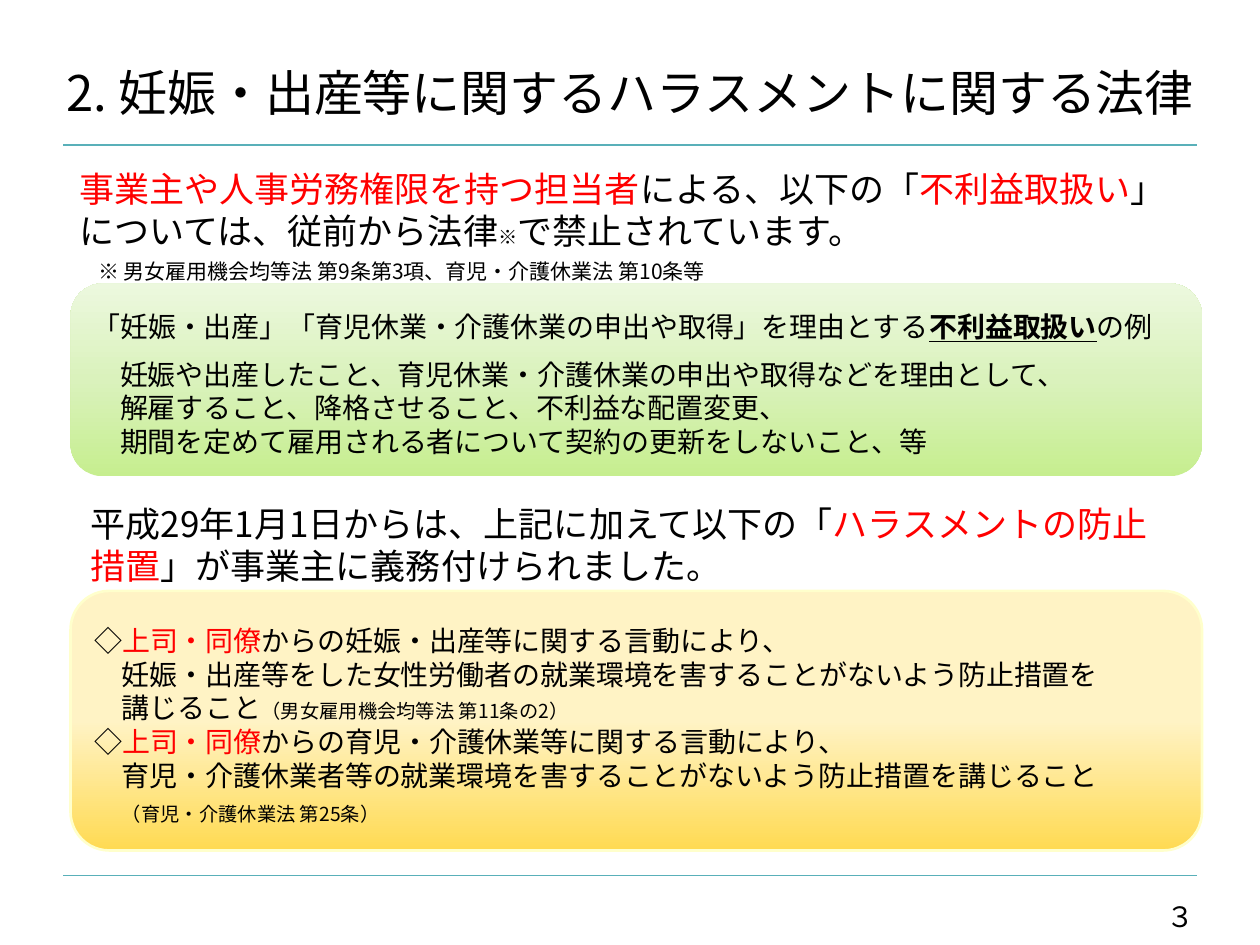
"""Build a slide on the law about harassment over pregnancy and childbirth."""
import copy
from dataclasses import dataclass

import pptx
import pptx.dml.color
import pptx.enum.lang
import pptx.enum.shapes
import pptx.enum.text
import pptx.oxml
import pptx.oxml.ns
import pptx.util
from pptx.util import Inches

ANCHOR = pptx.enum.text.MSO_ANCHOR


@dataclass(frozen=True)
class Theme:
    font: str = "Noto Sans CJK JP"
    text: str = "000000"
    accent: str = "FF0000"
    rule: str = "59B0B9"
    border: str = "FFFFCC"
    green: tuple = ("C6EE8F", "DAF2BC", "ECF8DE")
    yellow: tuple = ("FFDA52", "FFF3C5", "FFF3C5")
    title: float = 28
    lead: float = 20
    detail: float = 16
    note: float = 12
    small: float = 11
    leading: float = 1.2


THEME = Theme()


def rgb(value):
    return pptx.dml.color.RGBColor.from_string(value)


def add_run(paragraph, text, size, color=THEME.text, strong=False):
    run = paragraph.add_run()
    run.text = text
    font = run.font
    font.name = THEME.font
    font.size = pptx.util.Pt(size)
    font.color.rgb = rgb(color)
    font.language_id = pptx.enum.lang.MSO_LANGUAGE_ID.JAPANESE
    if strong:
        font.bold = font.underline = True
    east_asian = pptx.oxml.parse_xml(
        f'<a:ea {pptx.oxml.ns.nsdecls("a")} typeface="{THEME.font}"/>')
    run.font._element.find(pptx.oxml.ns.qn("a:latin")).addnext(east_asian)


def add_paragraph(frame, runs, size, indent=0, before=0, after=0, align="LEFT"):
    first = frame.paragraphs[0]
    paragraph = frame.add_paragraph() if first.runs else first
    paragraph.alignment = getattr(pptx.enum.text.PP_ALIGN, align)
    paragraph.line_spacing = pptx.util.Pt(size * THEME.leading)
    paragraph.space_before = pptx.util.Pt(before)
    paragraph.space_after = pptx.util.Pt(after)
    paragraph._p.get_or_add_pPr().set("marL", str(Inches(indent)))
    for text, *style in runs:
        options = {"size": size}
        for item in style:
            options.update(item)
        add_run(paragraph, text, **options)


def prepare_frame(shape, anchor):
    frame = shape.text_frame
    frame.word_wrap = True
    frame.vertical_anchor = anchor
    frame.margin_top, frame.margin_bottom = Inches(0.08), Inches(0.02)
    return frame


def add_text_box(slide, left, top, width, height, anchor=ANCHOR.TOP):
    box = slide.shapes.add_textbox(*map(Inches, (left, top, width, height)))
    return prepare_frame(box, anchor)


def add_panel(slide, top, height, colors, radius, border=None):
    panel = slide.shapes.add_shape(
        pptx.enum.shapes.MSO_SHAPE.ROUNDED_RECTANGLE,
        Inches(0.56), Inches(top), Inches(8.98), Inches(height))
    panel.shadow.inherit = False
    panel.adjustments[0] = radius
    panel.fill.gradient()
    panel.fill.gradient_angle = 90
    first = panel.fill.gradient_stops[0]._gs
    first.addnext(copy.deepcopy(first))
    for stop, color, position in zip(panel.fill.gradient_stops, colors, (0, 0.5, 1)):
        stop.color.rgb = rgb(color)
        stop.position = position
    if border:
        panel.line.color.rgb = rgb(border)
        panel.line.width = pptx.util.Pt(1.5)
    else:
        panel.line.fill.background()
    return prepare_frame(panel, ANCHOR.MIDDLE)


def add_rule(slide, top):
    rule = slide.shapes.add_connector(
        pptx.enum.shapes.MSO_CONNECTOR.STRAIGHT,
        Inches(0.5), Inches(top), Inches(9.5), Inches(top))
    rule.line.color.rgb = rgb(THEME.rule)
    rule.line.width = pptx.util.Pt(0.75)
    rule._element.spPr.append(
        pptx.oxml.parse_xml(f'<a:effectLst {pptx.oxml.ns.nsdecls("a")}/>'))


def main():
    presentation = pptx.Presentation()
    presentation.slide_width, presentation.slide_height = Inches(10), Inches(7.5)
    slide = presentation.slides.add_slide(presentation.slide_layouts[6])
    red = {"color": THEME.accent}
    small = {"size": THEME.small}
    indent = 0.22

    for top in (1.15, 6.95):
        add_rule(slide, top)

    title = add_text_box(slide, 0.43, 0.07, 9.62, 0.91, ANCHOR.BOTTOM)
    add_paragraph(title, [("2. 妊娠・出産等に関するハラスメントに関する法律",)], THEME.title)

    ban = add_text_box(slide, 0.53, 1.25, 9.13, 2.65)
    add_paragraph(ban, [
        ("事業主や人事労務権限を持つ担当者", red), ("による、以下の「",),
        ("不利益取扱い", red), ("」　については、従前から法律",),
        ("※", small), ("で禁止されています。",)], THEME.lead)
    add_paragraph(ban, [("※ 男女雇用機会均等法 第9条第3項、育児・介護休業法 第10条等",)],
                  THEME.note, indent=0.15, before=4)

    examples = add_panel(slide, 2.25, 1.53, THEME.green, 0.167)
    add_paragraph(examples, [
        ("「妊娠・出産」「育児休業・介護休業の申出や取得」を理由とする",),
        ("不利益取扱い", {"strong": True}), ("の例",)], THEME.detail, after=8.4)
    for line in ("妊娠や出産したこと、育児休業・介護休業の申出や取得などを理由として、",
                 "解雇すること、降格させること、不利益な配置変更、",
                 "期間を定めて雇用される者について契約の更新をしないこと、等"):
        add_paragraph(examples, [(line,)], THEME.detail, indent)

    duty = add_text_box(slide, 0.62, 3.91, 9.13, 2.65)
    add_paragraph(duty, [
        ("平成29年1月1日からは、上記に加えて以下の「",),
        ("ハラスメントの防止　措置", red),
        ("」が事業主に義務付けられました。",)], THEME.lead)

    measures = add_panel(slide, 4.69, 2.06, THEME.yellow, 0.149, THEME.border)
    duties = (
        ("からの妊娠・出産等に関する言動により、",
         [("妊娠・出産等をした女性労働者の就業環境を害することがないよう防止措置を",)],
         [("講じること",), ("（男女雇用機会均等法 第11条の2）", small)]),
        ("からの育児・介護休業等に関する言動により、",
         [("育児・介護休業者等の就業環境を害することがないよう防止措置を講じること",)],
         [("（育児・介護休業法 第25条）", small)]))
    for conduct, *lines in duties:
        add_paragraph(measures, [("◇",), ("上司・同僚", red), (conduct,)], THEME.detail)
        for runs in lines:
            add_paragraph(measures, runs, THEME.detail, indent)

    number = add_text_box(slide, 8.86, 6.98, 1.02, 0.52, ANCHOR.MIDDLE)
    add_paragraph(number, [("３",)], THEME.detail, align="CENTER")

    presentation.save("out.pptx")


if __name__ == "__main__":
    main()
